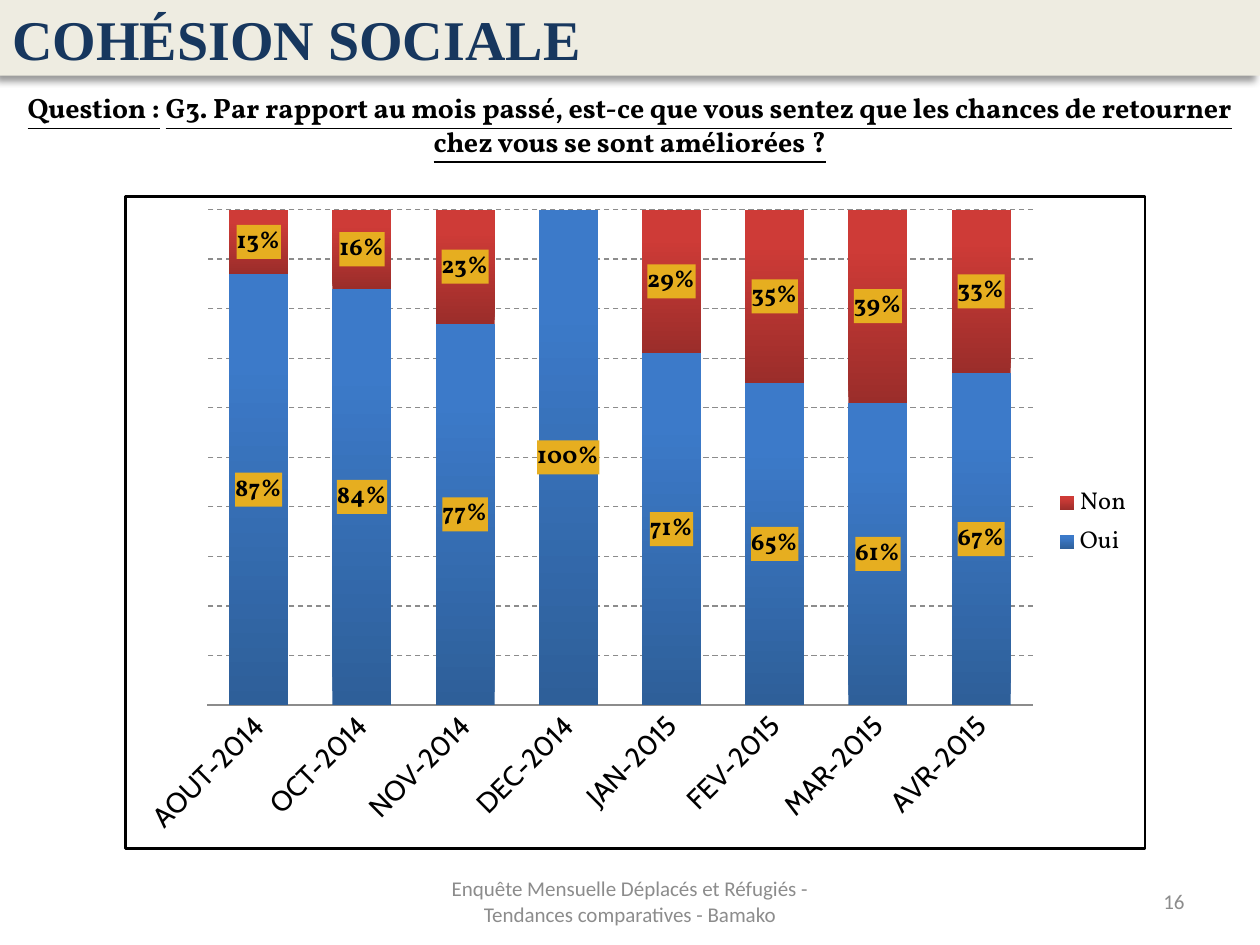
from dataclasses import dataclass

from lxml import etree
from pptx import Presentation
from pptx.chart.data import CategoryChartData
from pptx.dml.color import RGBColor
from pptx.enum import chart as ch, dml, shapes, text
from pptx.oxml import parse_xml
from pptx.util import Pt

BLACK = RGBColor(0x00, 0x00, 0x00)
GRAY = RGBColor(0x8C, 0x8C, 0x8C)
NAVY = RGBColor(0x17, 0x37, 0x5E)
CREAM = RGBColor(0xEE, 0xEC, 0xE1)
GOLD = RGBColor(0xE6, 0xAE, 0x20)
BLUE_DARK = RGBColor(0x2E, 0x5F, 0x99)
BLUE = RGBColor(0x3C, 0x7A, 0xC9)
RED_DARK = RGBColor(0x9B, 0x2D, 0x2A)
RED = RGBColor(0xCE, 0x3B, 0x37)

NS_A = "http://schemas.openxmlformats.org/drawingml/2006/main"
NS_C = "http://schemas.openxmlformats.org/drawingml/2006/chart"
NS = f'xmlns:a="{NS_A}" xmlns:c="{NS_C}"'

MONTHS = ["AOUT-2014", "OCT-2014", "NOV-2014", "DEC-2014",
          "JAN-2015", "FEV-2015", "MAR-2015", "AVR-2015"]


@dataclass
class Run:
    text: str
    fmt: dict


@dataclass
class Box:
    left: float
    top: float
    width: float
    height: float
    align: text.PP_ALIGN
    runs: list[Run]

    def frame(self) -> tuple:
        return Pt(self.left), Pt(self.top), Pt(self.width), Pt(self.height)


@dataclass
class Answer:
    name: str
    values: list[float]
    dark: RGBColor
    light: RGBColor


FOOTER = {"name": "Calibri", "size": Pt(12), "color": GRAY}
HEADING = {"name": "Times New Roman", "size": Pt(32), "bold": True, "color": NAVY}
QUESTION = {"name": "Vollkorn", "size": Pt(16), "bold": True, "color": BLACK}
UNDERLINED = QUESTION | {"underline": True}
LABEL = {"name": "Vollkorn", "size": Pt(14), "bold": True, "color": BLACK}
LEGEND = LABEL | {"bold": False}
MONTH = {"name": "Cabin", "size": Pt(16), "bold": False, "color": BLACK}

BANNER = Box(0, 0, 720, 43.2, text.PP_ALIGN.LEFT, [Run("COHÉSION SOCIALE", HEADING)])
TEXTS = [
    Box(516, 500.5, 168, 28.8, text.PP_ALIGN.RIGHT, [Run("16", FOOTER)]),
    Box(246, 500.5, 228, 28.8, text.PP_ALIGN.CENTER,
        [Run("Enquête Mensuelle Déplacés et Réfugiés - "
             "Tendances comparatives - Bamako", FOOTER)]),
    Box(0, 48, 720, 46, text.PP_ALIGN.CENTER, [
        Run("Question :", UNDERLINED),
        Run(" ", QUESTION),
        Run("G3. Par rapport au mois passé, est-ce que vous sentez que les chances "
            "de retourner chez vous se sont améliorées ?", UNDERLINED)]),
]
ANSWERS = [
    Answer("Oui", [0.87, 0.84, 0.77, 1, 0.71, 0.65, 0.61, 0.67], BLUE_DARK, BLUE),
    Answer("Non", [0.13, 0.16, 0.23, 0, 0.29, 0.35, 0.39, 0.33], RED_DARK, RED),
]


def set_font(font, fmt: dict) -> None:
    for key, value in fmt.items():
        if key == "color":
            font.color.rgb = value
        else:
            setattr(font, key, value)


def fill_text(sp, box: Box) -> None:
    tf = sp.text_frame
    tf.word_wrap = True
    tf.vertical_anchor = text.MSO_ANCHOR.MIDDLE
    p = tf.paragraphs[0]
    p.alignment = box.align
    for run in box.runs:
        r = p.add_run()
        r.text = run.text
        set_font(r.font, run.fmt)


def add_banner(s, box: Box) -> None:
    sp = s.shapes.add_shape(shapes.MSO_SHAPE.RECTANGLE, *box.frame())
    sp.fill.solid()
    sp.fill.fore_color.rgb = CREAM
    sp.line.fill.background()
    sp.shadow.inherit = False
    effects = sp._element.spPr.find(f"{{{NS_A}}}effectLst")
    effects.append(parse_xml(
        f'<a:outerShdw {NS} blurRad="{Pt(4)}" dist="{Pt(4)}" dir="8100000" algn="tr" '
        'rotWithShape="0"><a:srgbClr val="000000"><a:alpha val="40000"/></a:srgbClr>'
        '</a:outerShdw>'))
    fill_text(sp, box)


def style_series(series, answer: Answer) -> None:
    """Shade the bars from bottom to top and put gold labels on them."""
    fill = series.format.fill
    fill.gradient()
    fill.gradient_angle = 90
    for stop, color, place in zip(fill.gradient_stops, (answer.dark, answer.light), (0, 0.8)):
        stop.color.rgb = color
        stop.position = place
    labels = series.data_labels
    labels.show_value = True
    labels.number_format = "0%"
    labels.number_format_is_linked = False
    set_font(labels.font, LABEL)
    element = labels._element
    element.find(f"{{{NS_C}}}numFmt").addnext(parse_xml(
        f'<c:spPr {NS}><a:solidFill><a:srgbClr val="{GOLD}"/></a:solidFill></c:spPr>'))
    for i in (i for i, value in enumerate(answer.values) if value == 0):
        element.insert(0, parse_xml(
            f'<c:dLbl {NS}><c:idx val="{i}"/><c:delete val="1"/></c:dLbl>'))


def place_plot(chart, x: float, y: float, w: float, h: float) -> None:
    """Fix the inner plot area, in fractions of the chart."""
    area = chart._chartSpace.chart.plotArea
    for old in area.findall(f"{{{NS_C}}}layout"):
        area.remove(old)
    area.insert(0, parse_xml(
        f'<c:layout {NS}><c:manualLayout><c:layoutTarget val="inner"/>'
        '<c:xMode val="edge"/><c:yMode val="edge"/>'
        f'<c:x val="{x}"/><c:y val="{y}"/><c:w val="{w}"/><c:h val="{h}"/>'
        '</c:manualLayout></c:layout>'))


def add_answers_chart(s) -> None:
    data = CategoryChartData(number_format="0%")
    data.categories = MONTHS
    for answer in ANSWERS:
        data.add_series(answer.name, answer.values)
    chart = s.shapes.add_chart(ch.XL_CHART_TYPE.COLUMN_STACKED_100,
                               Pt(71), Pt(111.6), Pt(584), Pt(374), data).chart
    set_font(chart.font, {"name": "Calibri", "size": Pt(10), "color": BLACK})
    chart.has_title = False
    chart.has_legend = True
    chart.legend.position = ch.XL_LEGEND_POSITION.RIGHT
    chart.legend.include_in_layout = False
    set_font(chart.legend.font, LEGEND)

    plot = chart.plots[0]
    plot.gap_width, plot.overlap, plot.vary_by_categories = 75, 100, False
    for series, answer in zip(plot.series, ANSWERS):
        style_series(series, answer)

    months = chart.category_axis
    months.major_tick_mark = ch.XL_TICK_MARK.NONE
    months.format.line.color.rgb = GRAY
    set_font(months.tick_labels.font, MONTH)
    months._element.find(f"{{{NS_C}}}txPr").find(f"{{{NS_A}}}bodyPr").set("rot", "-2700000")

    scale = chart.value_axis
    scale.minimum_scale, scale.maximum_scale, scale.major_unit = 0, 1, 0.1
    scale.visible = False
    scale.has_major_gridlines = True
    grid = scale.major_gridlines.format.line
    grid.color.rgb = GRAY
    grid.width = Pt(0.75)
    grid.dash_style = dml.MSO_LINE.DASH

    place_plot(chart, 0.08, 0.02, 0.81, 0.76)
    chart._chartSpace.chart.addnext(parse_xml(
        f'<c:spPr {NS}><a:noFill/><a:ln w="{Pt(1.5)}"><a:solidFill>'
        f'<a:srgbClr val="{BLACK}"/></a:solidFill></a:ln></c:spPr>'))


def main() -> None:
    prs = Presentation()
    prs.slide_width, prs.slide_height = Pt(720), Pt(540)
    s = prs.slides.add_slide(prs.slide_layouts[6])
    add_banner(s, BANNER)
    for box in TEXTS:
        fill_text(s.shapes.add_textbox(*box.frame()), box)
    add_answers_chart(s)
    prs.save("out.pptx")


if __name__ == "__main__":
    main()
